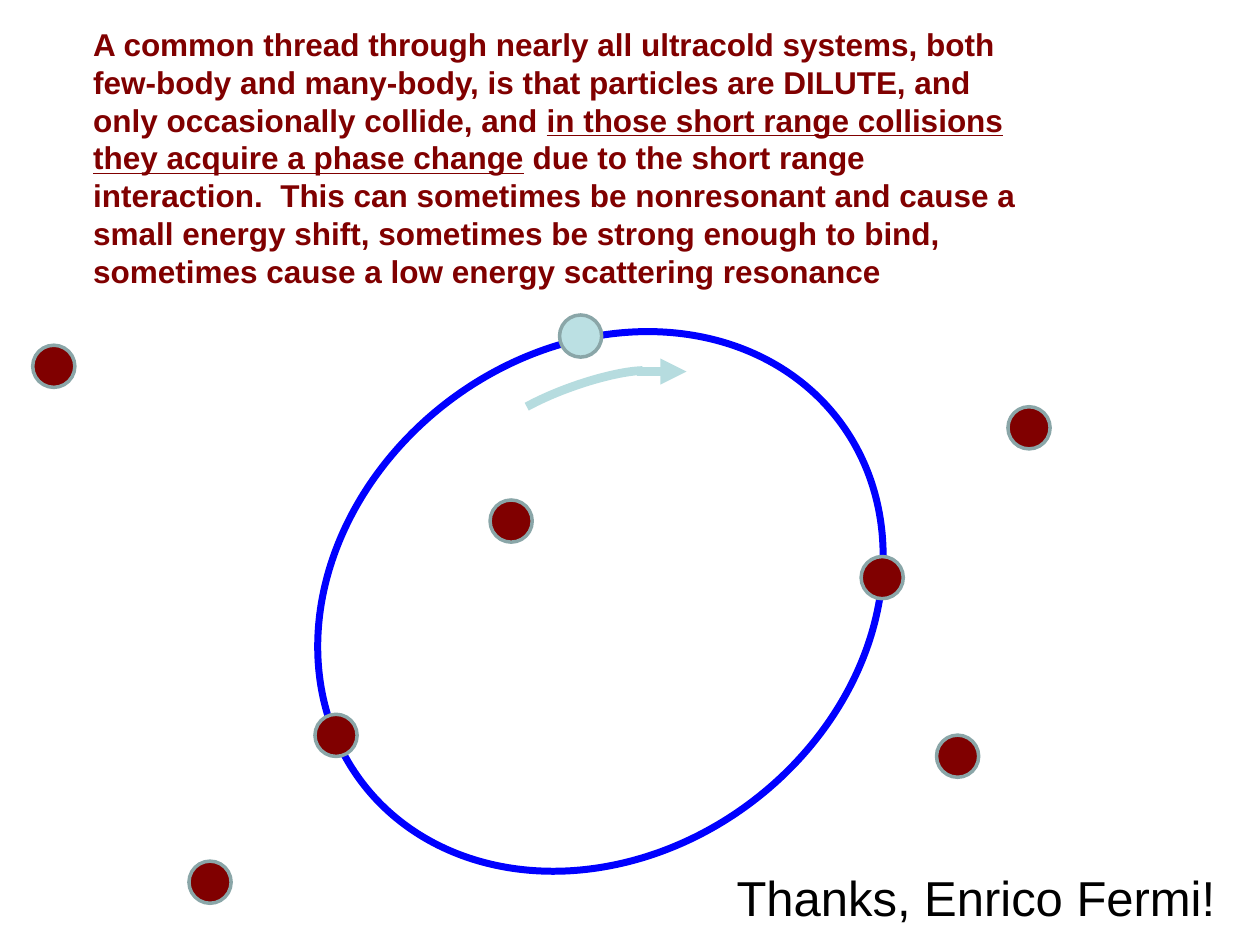
"""Build a slide on phase changes in dilute ultracold systems."""
import dataclasses
import typing

import lxml.etree
import pptx
import pptx.dml.color
import pptx.enum.shapes
import pptx.enum.text
import pptx.oxml.ns
import pptx.util

Cm = pptx.util.Cm
Kind = pptx.enum.shapes.MSO_SHAPE
HUES = {"red": "800000", "pale": "BBE0E3", "rim": "8AA6A8",
        "orbit": "0000FF", "arrow": "B6DCDF", "black": "000000"}
SIZE = 0.85


@dataclasses.dataclass
class Box:
    left: float
    top: float
    width: float
    height: float

    def cm(self) -> list:
        return [Cm(n) for n in (self.left, self.top, self.width, self.height)]


@dataclasses.dataclass
class Dot:
    left: float
    top: float
    hue: str = "red"


@dataclasses.dataclass
class Note:
    box: Box
    words: list
    size: int
    hue: str
    bold: bool = False


PAIR = [Dot(6.35, 14.4), Dot(17.36, 11.22), Dot(11.28, 6.35, "pale")]
LOOSE = [Dot(0.66, 6.96), Dot(20.32, 8.2), Dot(3.81, 17.36),
         Dot(18.88, 14.82), Dot(9.88, 10.08)]
THREAD = Note(Box(1.63, 0.38, 19.25, 5.64), [
    ("A common thread through nearly all ultracold systems, both few-body and "
     "many-body, is that particles are DILUTE, and only occasionally collide, and ", False),
    ("in those short range collisions they acquire a phase change", True),
    (" due to the short range interaction.  This can sometimes be nonresonant and "
     "cause a small energy shift, sometimes be strong enough to bind, sometimes "
     "cause a low energy scattering resonance", False)], 18, "red", True)
THANKS = Note(Box(14.6, 17.36, 10.8, 1.45), [("Thanks, Enrico Fermi!", False)], 28, "black")


def tint(name: str) -> pptx.dml.color.RGBColor:
    return pptx.dml.color.RGBColor.from_string(HUES[name])


def draw_line(item: typing.Any, hue: str, width: float) -> None:
    item.line.color.rgb = tint(hue)
    item.line.width = pptx.util.Pt(width)


def draw_shape(slide: typing.Any, kind: Kind, box: Box, hue: str, width: float,
               fill: typing.Optional[str] = None, turn: float = 0) -> typing.Any:
    shape = slide.shapes.add_shape(kind, *box.cm())
    shape.shadow.inherit = False
    shape.rotation = turn
    if fill:
        shape.fill.solid()
        shape.fill.fore_color.rgb = tint(fill)
    else:
        shape.fill.background()
    draw_line(shape, hue, width)
    return shape


def draw_dots(slide: typing.Any, dots: typing.List[Dot]) -> None:
    for dot in dots:
        draw_shape(slide, Kind.OVAL, Box(dot.left, dot.top, SIZE, SIZE), "rim", 2, dot.hue)


def draw_note(slide: typing.Any, note: Note) -> None:
    frame = slide.shapes.add_textbox(*note.box.cm()).text_frame
    frame.word_wrap = True
    frame.auto_size = pptx.enum.text.MSO_AUTO_SIZE.SHAPE_TO_FIT_TEXT
    para = frame.paragraphs[0]
    for text, under in note.words:
        run = para.add_run()
        run.text = text
        run.font.name = "Arial"
        run.font.size = pptx.util.Pt(note.size)
        run.font.bold = note.bold
        run.font.underline = under
        run.font.color.rgb = tint(note.hue)


def draw_arrow(slide: typing.Any) -> None:
    arc = draw_shape(slide, Kind.ARC, Box(9.88, 7.77, 3.61, 0.85), "arrow", 5, turn=340.4)
    arc.adjustments[0] = 119.62
    arc.adjustments[1] = 209.95
    tip = slide.shapes.add_connector(pptx.enum.shapes.MSO_CONNECTOR.STRAIGHT,
                                     Cm(12.85), Cm(7.49), Cm(13.84), Cm(7.49))
    draw_line(tip, "arrow", 5)
    name = pptx.oxml.ns.qn
    form = tip.element.spPr
    head = lxml.etree.SubElement(form.find(name("a:ln")), name("a:tailEnd"))
    head.set("type", "triangle")
    lxml.etree.SubElement(form, name("a:effectLst"))


def main() -> None:
    deck = pptx.Presentation()
    deck.slide_width, deck.slide_height = Cm(25.4), Cm(19.05)
    slide = deck.slides.add_slide(deck.slide_layouts.get_by_name("Blank"))
    draw_shape(slide, Kind.OVAL, Box(6.07, 7.06, 12.07, 10.13), "orbit", 4, turn=322.8)
    draw_dots(slide, PAIR)
    draw_note(slide, THREAD)
    draw_arrow(slide)
    draw_dots(slide, LOOSE)
    draw_note(slide, THANKS)
    deck.save("out.pptx")


if __name__ == "__main__":
    main()
